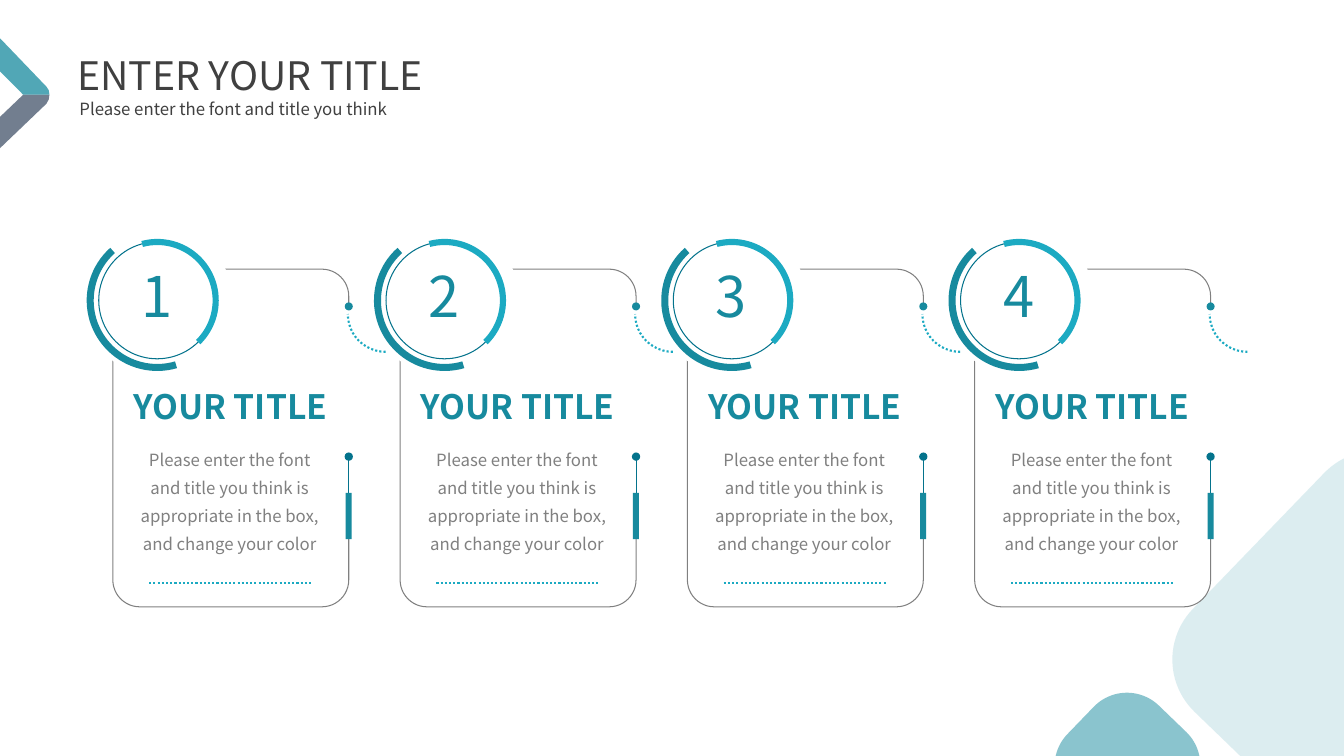
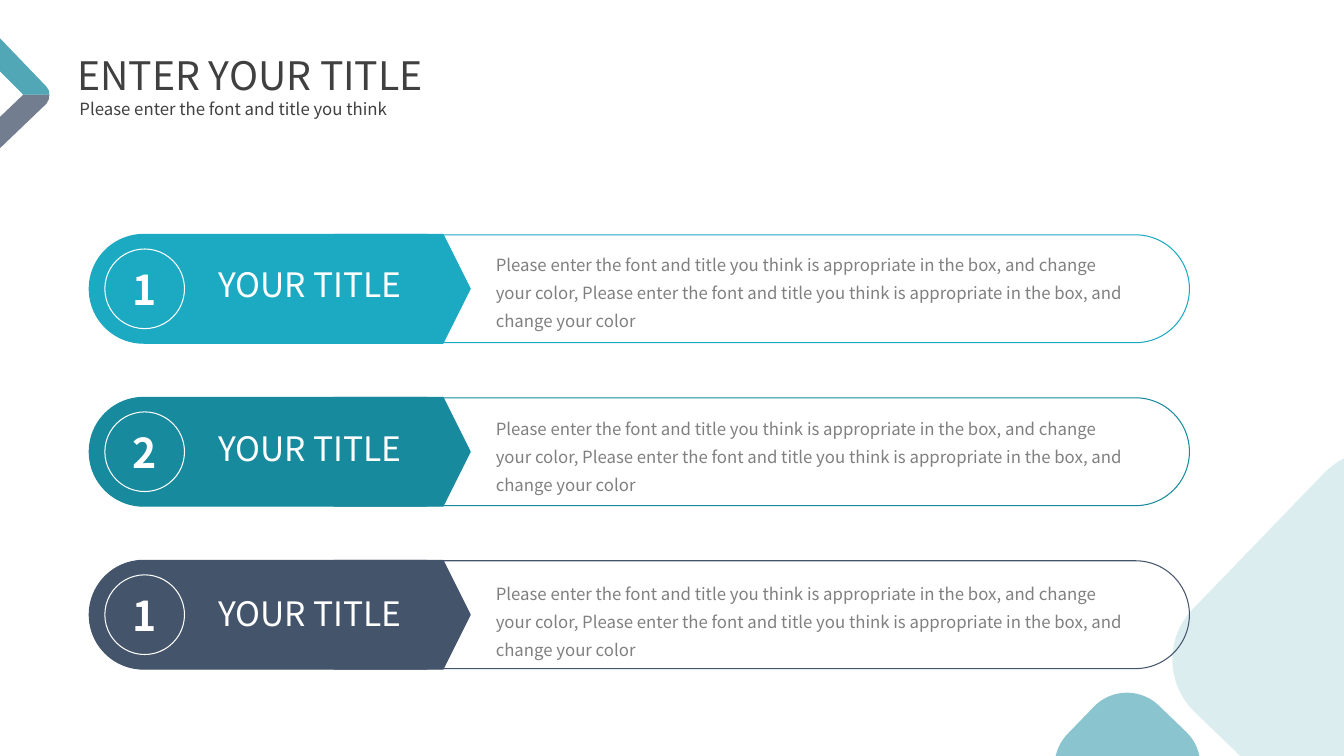
from lxml.etree import SubElement
from pptx import Presentation
from pptx.dml.color import RGBColor
from pptx.enum.dml import MSO_LINE
from pptx.enum.shapes import MSO_CONNECTOR, MSO_SHAPE
from pptx.enum.text import MSO_ANCHOR, MSO_AUTO_SIZE, PP_ALIGN
from pptx.oxml.ns import qn
from pptx.util import Pt

# Grid of 160 columns by 90 rows, with square cells
CELL = 76200
COLS, ROWS = 160, 90

WHITE = RGBColor(0xFF, 0xFF, 0xFF)
TEAL = RGBColor(0x17, 0x8A, 0x9E)
AQUA = RGBColor(0x1C, 0xAA, 0xC2)
DEEP = RGBColor(0x04, 0x73, 0x8C)
SLATE = RGBColor(0x44, 0x54, 0x6A)
DARK = RGBColor(0x40, 0x40, 0x40)
GRAY = RGBColor(0x80, 0x80, 0x80)
FONT = "Noto Sans CJK SC"
HEAD = "YOUR TITLE"
BODY = ("Please enter the font and title you think is appropriate "
        "in the box, and change your color")


def put(page, kind, box, fill=None, line=None, turn=0, adj=()):
    """Add a preset shape; box is left, top, width, height in cells."""
    shape = page.shapes.add_shape(kind, *[round(n * CELL) for n in box])
    shape.shadow.inherit = False
    shape.rotation = turn
    for i, value in enumerate(adj):
        shape.adjustments[i] = value
    if fill is None:
        shape.fill.background()
    else:
        shape.fill.solid()
        shape.fill.fore_color.rgb = fill
    if line is None:
        shape.line.fill.background()
    else:
        shape.line.color.rgb = line
        shape.line.width = Pt(0.75)
    return shape


def write(page, box, text, size, color, align=PP_ALIGN.CENTER, bold=False,
          lead=None, pad=None):
    """Add a text box; pad in cells also centres the text in height."""
    area = page.shapes.add_textbox(*[round(n * CELL) for n in box])
    frame = area.text_frame
    frame.word_wrap = True
    if pad is None:
        frame.auto_size = MSO_AUTO_SIZE.SHAPE_TO_FIT_TEXT
    else:
        frame.vertical_anchor = MSO_ANCHOR.MIDDLE
        frame.margin_left = frame.margin_right = round(pad * CELL)
        frame.margin_top = frame.margin_bottom = round(pad * CELL)
    para = frame.paragraphs[0]
    para.alignment = align
    if lead:
        para.line_spacing = Pt(lead)
    run = para.add_run()
    run.text = text
    run.font.name, run.font.size = FONT, Pt(size)
    run.font.bold, run.font.color.rgb = bold, color


deck = Presentation()
deck.slide_width, deck.slide_height = COLS * CELL, ROWS * CELL
cards, bars = [deck.slides.add_slide(deck.slide_layouts[6]) for _ in range(2)]

# Shared corners and title
LOWER = [(2.76, 11.28), (5.88, 11.28), (5.8, 11.85), (5.52, 12.36),
         (0, 17.64), (0, 13.92)]
UPPER = [(0, 4.56), (5.52, 10.32), (5.8, 10.75), (5.88, 11.28),
         (2.76, 11.28), (0, 8.5)]

for page in (cards, bars):
    tints = []
    for points, color in ((LOWER, SLATE), (UPPER, TEAL)):
        spots = [(round(x * CELL), round(y * CELL)) for x, y in points]
        pen = page.shapes.build_freeform(*spots[0])
        pen.add_line_segments(spots[1:])
        arm = pen.convert_to_shape()
        arm.shadow.inherit = False
        arm.fill.solid()
        arm.fill.fore_color.rgb = color
        arm.line.fill.background()
        tints.append((arm, 75))
    for x, y, side, curve, share in ((126.48, 83.4, 15.48, 0.354, 50),
                                     (144.24, 58.32, 39.84, 0.217, 15)):
        tile = put(page, MSO_SHAPE.ROUNDED_RECTANGLE, (x, y, side, side),
                   TEAL, turn=314, adj=[curve])
        tints.append((tile, share))
    for shape, share in tints:
        tone = shape.fill._xPr.find(qn("a:solidFill"))[0]
        SubElement(tone, qn("a:alpha"), val=str(share * 1000))
    write(page, (8.04, 5.52, 47.16, 6.84), "ENTER YOUR TITLE", 28, DARK,
          PP_ALIGN.JUSTIFY)
    write(page, (8.28, 11.16, 45.72, 3.6),
          "Please enter the font and title you think", 12, DARK,
          PP_ALIGN.JUSTIFY)

# Slide 1: four numbered cards
STEP = 34.2
for i in range(4):
    left = 13.44 + i * STEP
    edge = left + 28.08
    put(cards, MSO_SHAPE.ROUNDED_RECTANGLE, (left, 32.04, 28.08, 40.2),
        line=GRAY, adj=[0.114])
    # Gap in the right edge
    put(cards, MSO_SHAPE.RECTANGLE, (edge - 0.36, 36.72, 0.72, 23.64), WHITE)
    put(cards, MSO_SHAPE.OVAL, (edge - 0.48, 36, 0.96, 0.96), TEAL)

    # Pin on the edge and dotted rule under the text
    for ends, color, wide in (
            ((edge, 63.6, edge, 54.36), DEEP, 0.75),
            ((left + 4.32, 69.36, left + 23.64, 69.36), AQUA, 1.5)):
        rule = cards.shapes.add_connector(
            MSO_CONNECTOR.STRAIGHT, *[round(n * CELL) for n in ends])
        rule.line.color.rgb = color
        rule.line.width = Pt(wide)
        if color == AQUA:
            rule.line.dash_style = MSO_LINE.ROUND_DOT
        else:
            SubElement(rule.line._get_or_add_ln(), qn("a:tailEnd"),
                       type="oval")
        SubElement(rule._element.spPr, qn("a:effectLst"))
    put(cards, MSO_SHAPE.RECTANGLE, (edge - 0.36, 58.68, 0.72, 5.52), TEAL)

    # Badge rings around one centre
    for kind, size, fill, line, turn, adj in (
            (MSO_SHAPE.OVAL, 17.88, WHITE, None, 0, ()),
            (MSO_SHAPE.OVAL, 13.92, WHITE, DEEP, 0, ()),
            (MSO_SHAPE.BLOCK_ARC, 14.64, AQUA, None, 75, (108, 198.34, 0.05)),
            (MSO_SHAPE.BLOCK_ARC, 16.8, TEAL, None, 253.7,
             (108, 200.72, 0.05))):
        put(cards, kind, (left + 5.28 - size / 2, 35.76 - size / 2,
                          size, size), fill, line, turn, adj)

    # Dotted arc towards the next card
    arc = put(cards, MSO_SHAPE.ARC, (edge - 0.12, 32.88, 9, 9), line=AQUA,
              turn=180, adj=(162, 0))
    arc.line.width = Pt(1.5)
    arc.line.dash_style = MSO_LINE.ROUND_DOT

    write(cards, (left + 0.26, 29.95, 9.96, 10.4), str(i + 1), 40, TEAL,
          pad=1.56)
    write(cards, (left + 0.12, 45.36, 27.72, 6), HEAD, 24, TEAL, bold=True)
    write(cards, (left + 1.56, 51.96, 24.72, 14.64), BODY, 12, GRAY, lead=20)

# Slide 2: three long bars
for i, (mark, color) in enumerate((("1", AQUA), ("2", TEAL), ("1", SLATE))):
    mid = 34.38 + i * 19.4
    drop = i * 19.56
    # Outline, arrow point, rounded cap and number ring
    for kind, x, wide, high, fill, line, turn, adj in (
            (MSO_SHAPE.ROUND_2_SAME_RECTANGLE, 96.18, 12.84, 90.84,
             None, color, 90, (0.5, 0)),
            (MSO_SHAPE.FLOWCHART_OFFPAGE_CONNECTOR, 47.88, 12.96, 16.2,
             color, color, 270, ()),
            (MSO_SHAPE.ROUND_2_SAME_RECTANGLE, 30.72, 12.96, 40.2,
             color, color, 270, (0.5, 0)),
            (MSO_SHAPE.OVAL, 17.22, 9.48, 9.48, None, WHITE, 0, ())):
        ring = put(bars, kind, (x - wide / 2, mid - high / 2, wide, high),
                   fill, line, turn, adj)
    frame = ring.text_frame
    frame.margin_left = frame.margin_right = 0
    frame.margin_top = frame.margin_bottom = 0
    frame.vertical_anchor = MSO_ANCHOR.MIDDLE
    para = frame.paragraphs[0]
    para.alignment = PP_ALIGN.CENTER
    run = para.add_run()
    run.text = mark
    run.font.name, run.font.size = FONT, Pt(29.3)
    run.font.bold, run.font.color.rgb = True, WHITE

    write(bars, (22.44, 30.84 + drop, 28.92, 6), HEAD, 24, WHITE)
    write(bars, (57.84, 28.8 + drop, 77.04, 14.64), BODY + ", " + BODY, 12,
          GRAY, PP_ALIGN.LEFT, lead=20)

deck.save("out.pptx")
